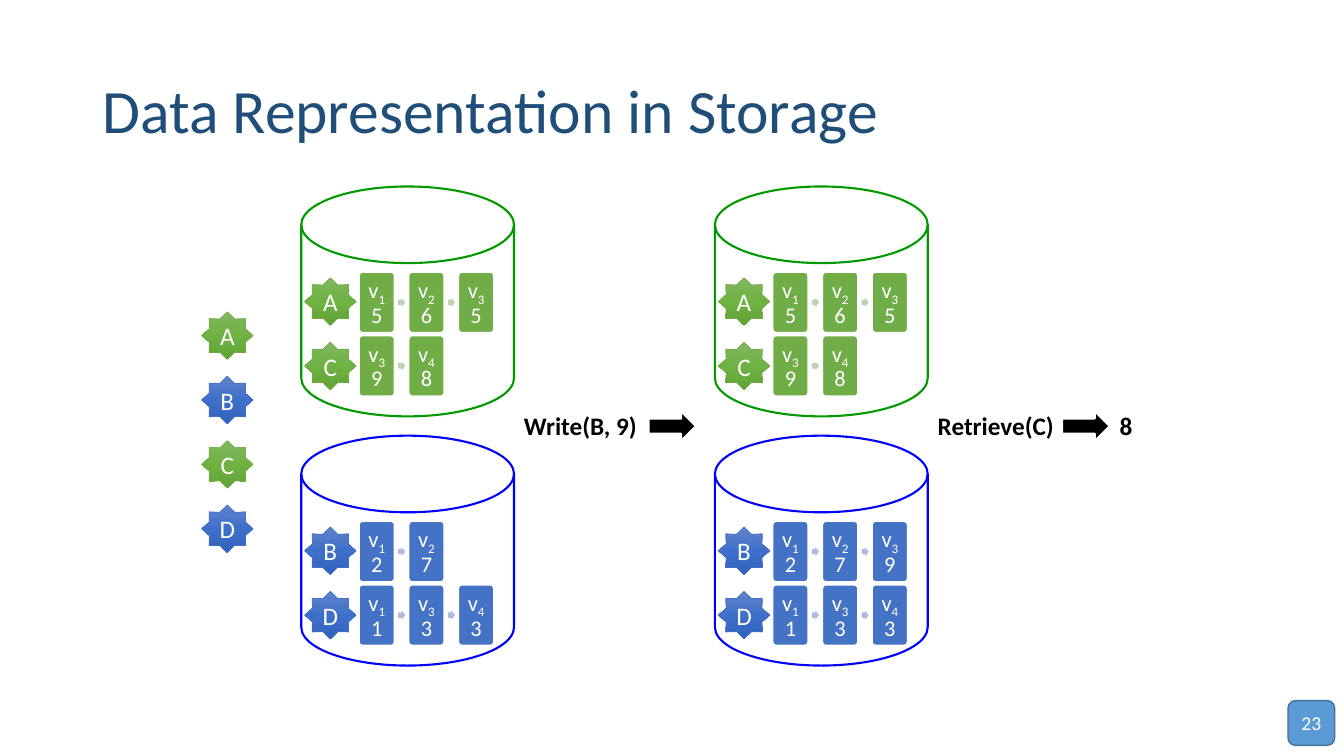
from copy import deepcopy
from dataclasses import dataclass

from pptx import Presentation
from pptx.dml.color import RGBColor
from pptx.enum.shapes import MSO_SHAPE as Preset
from pptx.enum.text import MSO_ANCHOR as Anchor, MSO_AUTO_SIZE as AutoSize, PP_ALIGN as Align
from pptx.oxml.ns import qn
from pptx.util import Pt


@dataclass(frozen=True)
class Family:
    outline: str
    main: str
    pale: str
    gradient: tuple


@dataclass(frozen=True)
class Theme:
    font: str = "Calibri"
    title: str = "1F4E79"
    ink: str = "000000"
    paper: str = "FFFFFF"
    badge: str = "5B9BD5"
    badge_line: str = "43739E"
    title_size: int = 44
    body_size: int = 18
    version_size: int = 16
    badge_size: int = 14
    green: Family = Family("009900", "70AD47", "BBD3B1", ("81B861", "6FB242", "62A336"))
    blue: Family = Family("0000FF", "4472C4", "B0BCDE", ("6183CB", "3E70CA", "3062BB"))


THEME = Theme()

DISK_W, DISK_H = 152, 164.2
DISK_LEFT, DISK_TOP = 215.2, 133.2
DISK_STEP_X, DISK_STEP_Y = 295.5, 178
STAR_W, STAR_H, STAR_STEP = 36.8, 34, 46
VERSION_W, VERSION_H = 25.2, 43.2
VERSION_STEP_X, VERSION_STEP_Y = 35.5, 45.4
LINK_W, LINK_H = 5.2, 6.4

KEY_FAMILIES = {"A": THEME.green, "B": THEME.blue, "C": THEME.green, "D": THEME.blue}
GREEN_HISTORY = {"A": [(1, 5), (2, 6), (3, 5)], "C": [(3, 9), (4, 8)]}
BLUE_BEFORE = {"B": [(1, 2), (2, 7)], "D": [(1, 1), (3, 3), (4, 3)]}
BLUE_AFTER = {**BLUE_BEFORE, "B": BLUE_BEFORE["B"] + [(3, 9)]}


def rgb(color):
    return RGBColor.from_string(color)


def write(frame, text, size=THEME.body_size, color=THEME.paper, bold=False,
          align=Align.CENTER, spacing=None, subscript=False):
    """Append a formatted run to the first paragraph of a text frame."""
    paragraph = frame.paragraphs[0]
    paragraph.alignment = align
    paragraph.line_spacing = spacing
    run = paragraph.add_run()
    run.text = text
    run.font.name = THEME.font
    run.font.size = Pt(size)
    run.font.bold = bold
    run.font.color.rgb = rgb(color)
    if subscript:
        run.font._element.set("baseline", "-25000")


def draw(slide, preset, left, top, width, height, fill, line=None, weight=1, margin=0):
    shape = slide.shapes.add_shape(preset, Pt(left), Pt(top), Pt(width), Pt(height))
    shape.shadow.inherit = False
    shape.fill.solid()
    shape.fill.fore_color.rgb = rgb(fill)
    if line:
        shape.line.color.rgb = rgb(line)
        shape.line.width = Pt(weight)
    else:
        shape.line.fill.background()
    frame = shape.text_frame
    frame.vertical_anchor = Anchor.MIDDLE
    frame.margin_left = frame.margin_right = Pt(margin)
    frame.margin_top = frame.margin_bottom = Pt(margin)
    return shape


def add_title(slide, text, left, top, width, height):
    title = slide.shapes.title
    title.left, title.top, title.width, title.height = map(Pt, (left, top, width, height))
    frame = title.text_frame
    frame.auto_size = AutoSize.NONE
    frame.vertical_anchor = Anchor.MIDDLE
    write(frame, text, size=THEME.title_size, color=THEME.title, align=Align.LEFT, spacing=0.9)


def add_key(slide, key, left, top):
    family = KEY_FAMILIES[key]
    star = draw(slide, Preset.STAR_8_POINT, left, top, STAR_W, STAR_H,
                family.main, family.main, weight=0.5)
    star.fill.gradient()
    star.fill.gradient_angle = 270
    stop_list = star.element.find(".//" + qn("a:gsLst"))
    stop_list.insert(1, deepcopy(stop_list[0]))
    for stop, position, color in zip(star.fill.gradient_stops, (0, 0.5, 1), family.gradient):
        stop.position = position
        stop.color.rgb = rgb(color)
    write(star.text_frame, key)


def add_history(slide, versions, family, left, top):
    """Draw a chain of version cards joined by small arrows."""
    for column, (version, value) in enumerate(versions):
        x = left + column * VERSION_STEP_X
        if column:
            link = draw(slide, Preset.RIGHT_ARROW, x - 7.6, top + (VERSION_H - LINK_H) / 2,
                        LINK_W, LINK_H, family.pale)
            link.adjustments[0] = 0.6
        card = draw(slide, Preset.ROUNDED_RECTANGLE, x, top, VERSION_W, VERSION_H,
                    family.main, THEME.paper, margin=5)
        card.adjustments[0] = 0.1
        style = {"size": THEME.version_size, "spacing": 0.9}
        write(card.text_frame, "v", **style)
        write(card.text_frame, str(version), subscript=True, **style)
        write(card.text_frame, f" {value}", **style)


def add_disk(slide, histories, family, left, top):
    draw(slide, Preset.FLOWCHART_MAGNETIC_DISK, left, top, DISK_W, DISK_H,
         THEME.paper, family.outline, weight=1.5)
    for row, (key, versions) in enumerate(histories.items()):
        add_history(slide, versions, family, left + 41.3, top + 61.2 + row * VERSION_STEP_Y)
        add_key(slide, key, left + 2.4, top + 65.2 + row * STAR_STEP)


def add_storage(slide, green_history, blue_history, left, top):
    add_disk(slide, green_history, THEME.green, left, top)
    add_disk(slide, blue_history, THEME.blue, left, top + DISK_STEP_Y)


def add_caption(slide, text, left, top, width):
    caption = slide.shapes.add_textbox(Pt(left), Pt(top), Pt(width), Pt(29))
    frame = caption.text_frame
    frame.word_wrap = False
    frame.auto_size = AutoSize.SHAPE_TO_FIT_TEXT
    write(frame, text, color=THEME.ink, bold=True, align=Align.LEFT)


def add_operation(slide, call, call_width, left, top, result=None):
    add_caption(slide, call, left, top, call_width)
    draw(slide, Preset.RIGHT_ARROW, left + 96, top + 4, 34, 21.4,
         THEME.ink, THEME.paper, weight=1.5)
    if result:
        add_caption(slide, result, left + 130, top, 24)


def add_page_number(slide, number, left, top, width, height):
    badge = draw(slide, Preset.ROUNDED_RECTANGLE, left, top, width, height,
                 THEME.badge, THEME.badge_line)
    write(badge.text_frame, number, size=THEME.badge_size)


def build_storage_slide(deck):
    slide = deck.slides.add_slide(deck.slide_layouts[5])
    add_title(slide, "Data Representation in Storage", 66, 28.75, 828, 104.4)
    for row, key in enumerate(KEY_FAMILIES):
        add_key(slide, key, 144, 222.7 + row * STAR_STEP)
    before_right = DISK_LEFT + DISK_W
    add_storage(slide, GREEN_HISTORY, BLUE_BEFORE, DISK_LEFT, DISK_TOP)
    add_storage(slide, GREEN_HISTORY, BLUE_AFTER, DISK_LEFT + DISK_STEP_X, DISK_TOP)
    add_operation(slide, "Write(B, 9)", 96, before_right, 289.7)
    add_operation(slide, "Retrieve(C)", 98, before_right + DISK_STEP_X, 289.7, result="8")
    add_page_number(slide, "23", 920, 500.4, 33.4, 32)


def main():
    deck = Presentation()
    deck.slide_width, deck.slide_height = Pt(960), Pt(540)
    build_storage_slide(deck)
    deck.save("out.pptx")


if __name__ == "__main__":
    main()
